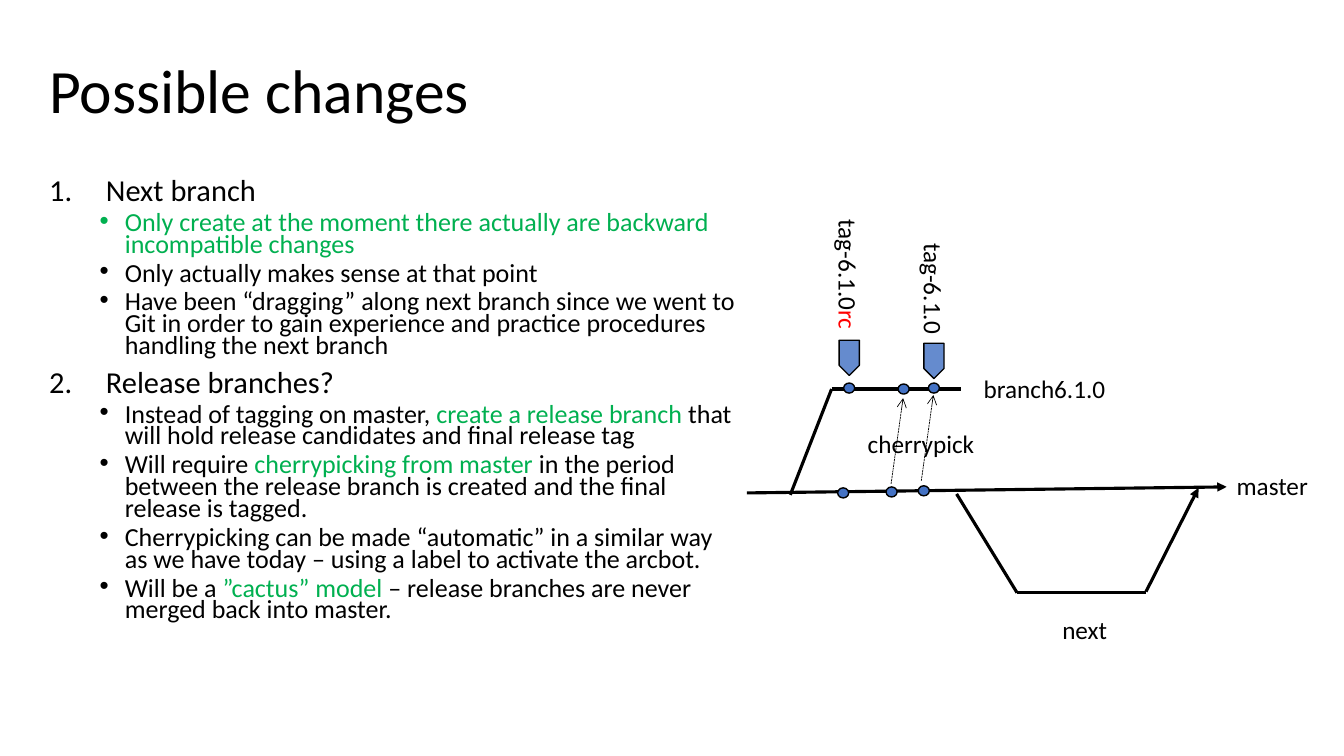
from lxml import etree
from pptx import Presentation
from pptx.dml.color import RGBColor
from pptx.enum.dml import MSO_LINE
from pptx.enum.shapes import MSO_CONNECTOR, MSO_SHAPE
from pptx.enum.text import MSO_ANCHOR, MSO_AUTO_SIZE
from pptx.oxml.ns import qn
from pptx.util import Pt

STRAIGHT = MSO_CONNECTOR.STRAIGHT
OVAL, PENTAGON = MSO_SHAPE.OVAL, MSO_SHAPE.PENTAGON
SHORT_DASH = MSO_LINE.SQUARE_DOT
MIDDLE, TOP = MSO_ANCHOR.MIDDLE, MSO_ANCHOR.TOP
FIT_SHAPE, NO_FIT = MSO_AUTO_SIZE.SHAPE_TO_FIT_TEXT, MSO_AUTO_SIZE.NONE

FONT = "Calibri"
BLACK, GREEN, RED, BLUE = "000000", "00B050", "FF0000", "4472C4"

# Outline: (level, spans), each span being (text, colour)
OUTLINE = [
    (0, [("Next branch", BLACK)]),
    (1, [("Only create at the moment there actually are backward "
          "incompatible changes", GREEN)]),
    (1, [("Only actually makes sense at that point", BLACK)]),
    (1, [("Have been “dragging” along next branch since we went to Git in order "
          "to gain experience and practice procedures handling the next branch", BLACK)]),
    (0, [("Release branches?", BLACK)]),
    (1, [("Instead of tagging on master, ", BLACK),
         ("create a release branch ", GREEN),
         ("that will hold release candidates and final release tag", BLACK)]),
    (1, [("Will require ", BLACK),
         ("cherrypicking from master ", GREEN),
         ("in the period between the release branch is created and the final "
          "release is tagged.", BLACK)]),
    (1, [("Cherrypicking can be made “automatic” in a similar way as we have "
          "today – using a label to activate the arcbot.", BLACK)]),
    (1, [("Will be a ", BLACK),
         ("”cactus” model ", GREEN),
         ("– release branches are never merged back into master.", BLACK)]),
]
# Per level: size, space before, left margin, hanging indent, bullet tag, bullet attributes
LEVELS = [
    (21.7, 10, 40.5, 40.5, "a:buAutoNum", {"type": "arabicPeriod"}),
    (18.6, 5, 54, 18, "a:buChar", {"char": "•"}),
]

# Diagram: line ends and arrowhead
BRANCH_LINES = [
    ((533.5, 352.1), (876.2, 347.8), "triangle"),
    ((564.5, 353.5), (594, 277.9), None),
    ((594, 277.9), (686.2, 277.9), None),
    ((726.5, 423.4), (683.3, 352.8), None),
    ((726.5, 423.4), (818.6, 423.4), None),
    ((818.6, 422.6), (856.1, 348.5), "triangle"),
]
CHERRYPICKS = [((636.5, 345.6), (645.1, 284.4)), ((658.1, 343.4), (666.7, 282.2))]
COMMITS = [(602.6, 273.6), (641.5, 274.3), (663.1, 273.6),
           (598.3, 348.5), (632.9, 347.8), (655.9, 347)]
TAG_MARKS = [(594, 248.4), (654.5, 250.6)]
# Labels: left, top, width, rotation, wrapping, spans
LABELS = [
    (559.4, 182.2, 93.6, 90, False, [("tag-6.1.0", BLACK), ("rc", RED)]),
    (627.1, 192.2, 79.9, 90, False, [("tag-6.1.0", BLACK)]),
    (876.2, 332.6, 66.2, 0, False, [("master", BLACK)]),
    (695.5, 262.8, 111.6, 0, True, [("branch6.1.0", BLACK)]),
    (612.7, 302.4, 91.4, 0, False, [("cherrypick", BLACK)]),
    (751.7, 435.6, 46.8, 0, False, [("next", BLACK)]),
]


def colour(value):
    return RGBColor.from_string(value)


def add_spans(para, spans, size):
    for text, value in spans:
        span = para.add_run()
        span.text = text
        span.font.name = FONT
        span.font.size = Pt(size)
        span.font.color.rgb = colour(value)


def add_box(page, left, top, width, height, wrap=True, anchor=TOP, fit=NO_FIT):
    box = page.shapes.add_textbox(Pt(left), Pt(top), Pt(width), Pt(height))
    box.text_frame.word_wrap = wrap
    box.text_frame.vertical_anchor = anchor
    box.text_frame.auto_size = fit
    return box


def add_label(page, left, top, width, rotation, wrap, spans):
    box = add_box(page, left, top, width, 28.8, wrap, fit=FIT_SHAPE)
    box.rotation = rotation
    add_spans(box.text_frame.paragraphs[0], spans, 18)


def add_outline(page):
    frame = add_box(page, 28.1, 126, 505.4, 342.7).text_frame
    for index, (level, spans) in enumerate(OUTLINE):
        para = frame.add_paragraph() if index else frame.paragraphs[0]
        size, before, margin, hanging, bullet, attributes = LEVELS[level]
        para.level = level
        para.line_spacing = 0.7
        para.space_before = Pt(before)
        props = para._p.get_or_add_pPr()
        props.set("marL", str(Pt(margin)))
        props.set("indent", str(-Pt(hanging)))
        etree.SubElement(props, qn("a:buFont"), typeface="Arial" if level else "+mj-lt")
        etree.SubElement(props, qn(bullet), attributes)
        add_spans(para, spans, size)


def add_line(page, start, end, width, head=None, dash=None):
    line = page.shapes.add_connector(STRAIGHT, *[Pt(v) for v in start + end])
    line.line.color.rgb = colour(BLACK)
    line.line.width = Pt(width)
    if dash:
        line.line.dash_style = dash
    if head:
        etree.SubElement(line.line._get_or_add_ln(), qn("a:tailEnd"), type=head)
    etree.SubElement(line._element.spPr, qn("a:effectLst"))


def add_mark(page, kind, left, top, width, height, rotation=0, opacity=100):
    mark = page.shapes.add_shape(kind, Pt(left), Pt(top), Pt(width), Pt(height))
    mark.shadow.inherit = False
    mark.rotation = rotation
    mark.fill.solid()
    mark.fill.fore_color.rgb = colour(BLUE)
    mark.line.color.rgb = colour(BLACK)
    mark.line.width = Pt(1)
    if opacity < 100:
        shade = mark._element.spPr.find(qn("a:solidFill")).find(qn("a:srgbClr"))
        etree.SubElement(shade, qn("a:alpha"), val=str(opacity * 1000))


def main():
    deck = Presentation()
    deck.slide_width, deck.slide_height = Pt(960), Pt(540)
    page = deck.slides.add_slide(deck.slide_layouts[6])

    # Title and outline
    title = add_box(page, 28.1, 14.4, 828, 104.4, anchor=MIDDLE)
    heading = title.text_frame.paragraphs[0]
    heading.line_spacing = 0.9
    add_spans(heading, [("Possible changes", BLACK)], 44)
    add_outline(page)

    # Branches, commits and tags
    for start, end, head in BRANCH_LINES:
        add_line(page, start, end, 2.25, head)
    for left, top in COMMITS:
        add_mark(page, OVAL, left, top, 7.9, 7.2)
    for start, end in CHERRYPICKS:
        add_line(page, start, end, 0.5, "arrow", SHORT_DASH)
    for left, top in TAG_MARKS:
        add_mark(page, PENTAGON, left, top, 25.2, 14.4, rotation=90, opacity=82)

    # Diagram labels
    for label in LABELS:
        add_label(page, *label)

    deck.save("out.pptx")


if __name__ == "__main__":
    main()
